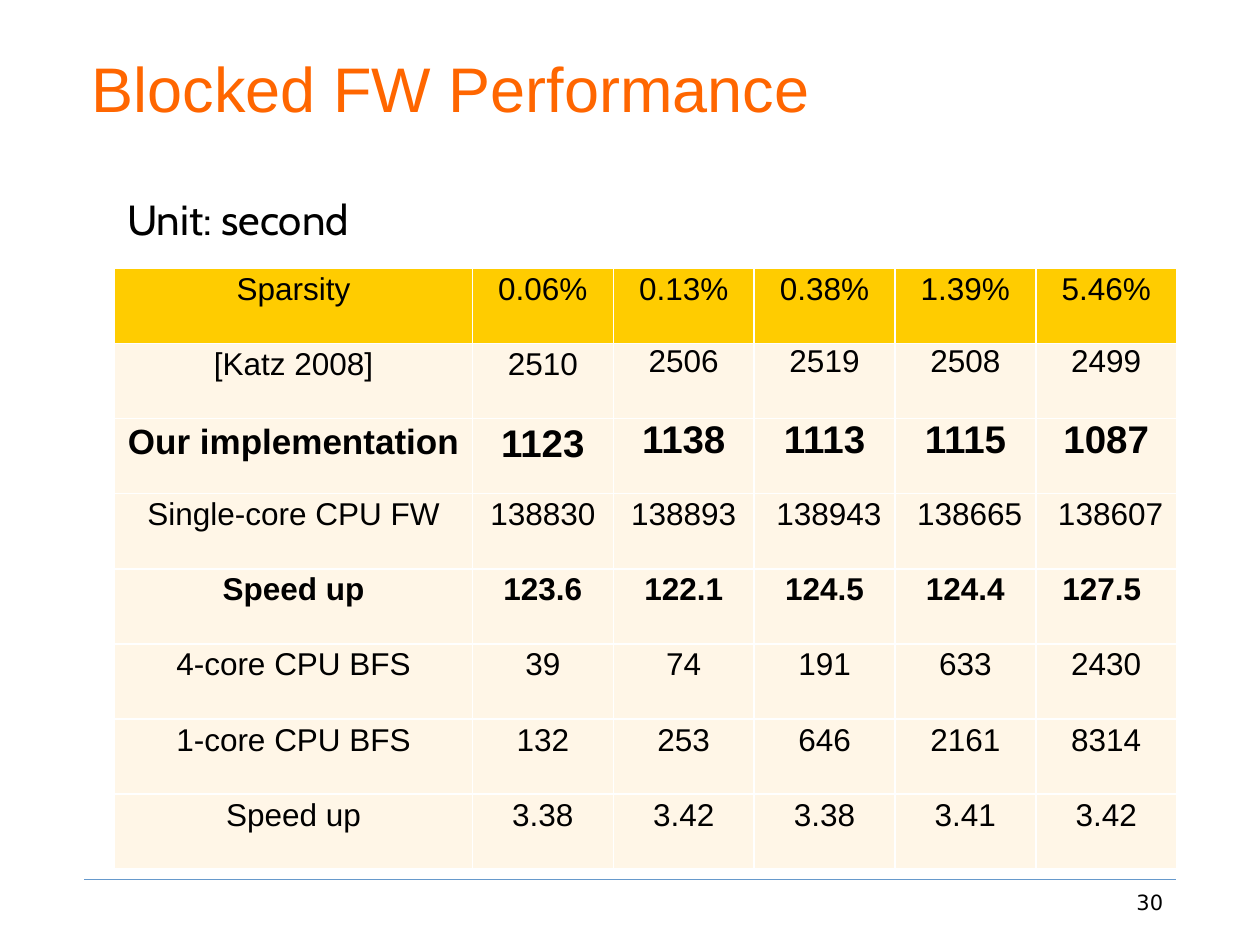
from dataclasses import dataclass

import pptx
import pptx.dml.color
import pptx.enum.shapes
import pptx.enum.text
import pptx.oxml
import pptx.oxml.ns
import pptx.util
from lxml import etree


@dataclass(frozen=True)
class Theme:
    title_color: str = "FF6600"
    ink: str = "000000"
    header_fill: str = "FFCC00"
    body_fill: str = "FFF6E7"
    border: str = "FFFFFF"
    rule: str = "6699CC"
    face: str = "Arial"
    unit_face: str = "Cabin"
    number_face: str = "DejaVu Sans"
    title_size: int = 36
    unit_size: int = 24
    value_size: int = 22
    label_size: int = 20
    cell_size: int = 18
    number_size: int = 12


theme = Theme()
inch = pptx.util.Inches
rgb = pptx.dml.color.RGBColor.from_string
align = pptx.enum.text.PP_ALIGN


def write(frame, text, face, size, color, alignment, bold=False):
    para = frame.paragraphs[0]
    para.alignment = alignment
    span = para.add_run()
    span.text = text
    span.font.name = face
    span.font.size = pptx.util.Pt(size)
    span.font.bold = bold
    span.font.color.rgb = rgb(color)
    return para


def add_border(cell, color):
    properties = cell._tc.get_or_add_tcPr()
    # Borders come before the fill in the cell properties
    for position, side in enumerate(("lnL", "lnR", "lnT", "lnB")):
        line = etree.Element(pptx.oxml.ns.qn(f"a:{side}"), w="12700")
        fill = etree.SubElement(line, pptx.oxml.ns.qn("a:solidFill"))
        etree.SubElement(fill, pptx.oxml.ns.qn("a:srgbClr"), val=color)
        properties.insert(position, line)


deck = pptx.Presentation()
deck.slide_width, deck.slide_height = inch(10), inch(7.5)
page = deck.slides.add_slide(deck.slide_layouts[5])
left = inch(0.91)

# Footer rule
rule = page.shapes.add_connector(
    pptx.enum.shapes.MSO_CONNECTOR.STRAIGHT,
    inch(0.67), inch(6.98), inch(9.33), inch(6.98))
rule.line.color.rgb = rgb(theme.rule)
rule.line.width = pptx.util.Pt(0.25)
etree.SubElement(rule._element.spPr, pptx.oxml.ns.qn("a:effectLst"))

# Title
title = page.shapes.title
title.left, title.top = inch(0.63), inch(0.29)
title.width, title.height = inch(8.75), inch(0.75)
title.text_frame.vertical_anchor = pptx.enum.text.MSO_ANCHOR.BOTTOM
title.text_frame.auto_size = pptx.enum.text.MSO_AUTO_SIZE.NONE
write(title.text_frame, "Blocked FW Performance", theme.face,
      theme.title_size, theme.title_color, align.LEFT)

# Run times by sparsity
results = [
    ["Sparsity", "0.06%", "0.13%", "0.38%", "1.39%", "5.46%"],
    ["[Katz 2008]", "2510", "2506", "2519", "2508", "2499"],
    ["Our implementation", "1123", "1138", "1113", "1115", "1087"],
    ["Single-core CPU FW", "138830", "138893", " 138943", " 138665", " 138607"],
    ["Speed up", "123.6", "122.1", "124.5", "124.4", "127.5 "],
    ["4-core CPU BFS", "39", "74", "191", "633", "2430"],
    ["1-core CPU BFS", "132", "253", "646", "2161", "8314"],
    ["Speed up", "3.38", "3.42", "3.38", "3.41", "3.42"],
]
own_row, bold_rows, tight_rows = 2, (2, 4), (1, 2)
table_width, table_height, label_width = inch(8.43), inch(4.77), inch(2.84)
row_count, column_count = len(results), len(results[0])
table = page.shapes.add_table(row_count, column_count, left, inch(2.13),
                              table_width, table_height).table
for index, column in enumerate(table.columns):
    column.width = (label_width if index == 0
                    else (table_width - label_width) // (column_count - 1))
for row in table.rows:
    row.height = table_height // row_count

for r, values in enumerate(results):
    for c, value in enumerate(values):
        cell = table.cell(r, c)
        cell.margin_left = cell.margin_right = inch(0.07)
        cell.margin_top = cell.margin_bottom = 0
        cell.fill.solid()
        cell.fill.fore_color.rgb = rgb(theme.body_fill if r else theme.header_fill)
        add_border(cell, theme.border)
        size = theme.cell_size
        if r == own_row:
            size = theme.value_size if c else theme.label_size
        para = write(cell.text_frame, value, theme.face, size, theme.ink,
                     align.CENTER, r in bold_rows)
        if r not in tight_rows or c < 2:
            para.line_spacing = 1.1

# Page number and unit note
notes = [
    ("30", (8.7, 7.01, 0.63, 0.52), theme.number_face, theme.number_size, align.RIGHT),
    ("Unit: second", (0.91, 1.49, 2.55, 0.5), theme.unit_face, theme.unit_size, align.LEFT),
]
for text, place, face, size, alignment in notes:
    box = page.shapes.add_textbox(*map(inch, place))
    box.text_frame.word_wrap = True
    write(box.text_frame, text, face, size, theme.ink, alignment)

deck.save("out.pptx")
